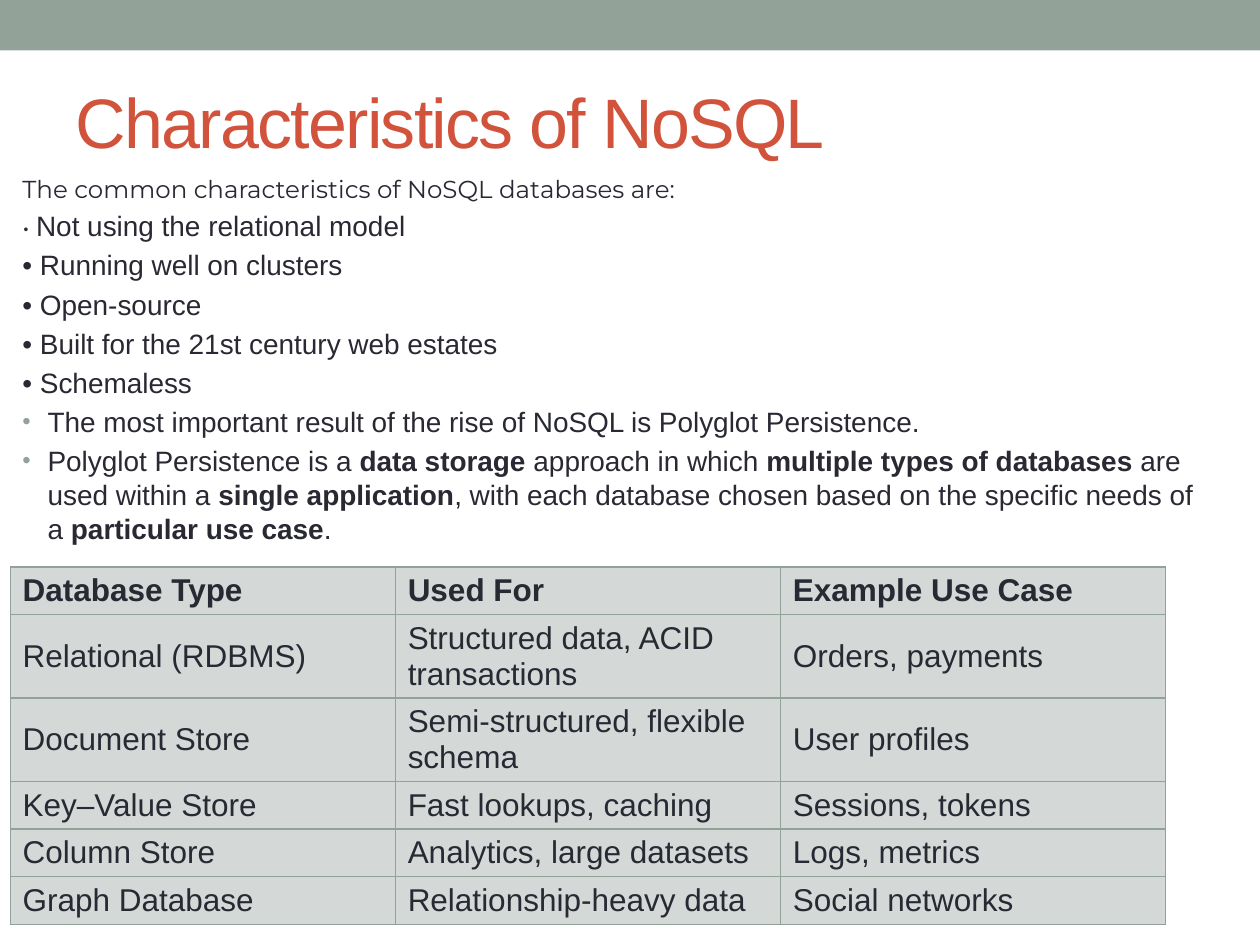
from pptx import Presentation
from pptx import util as u
from pptx.dml.color import RGBColor
from pptx.enum import shapes, text
from pptx.oxml import parse_xml
from pptx.oxml.ns import nsdecls

COLORS = {"bar": "93A299", "title": "D2533C", "ink": "292934", "cell": "D4D9D7"}

INTRO = "The common characteristics of NoSQL databases are:"
TRAITS = [
    "Not using the relational model",
    "Running well on clusters",
    "Open-source",
    "Built for the 21st century web estates",
    "Schemaless",
]
POINTS = [
    [("The most important result of the rise of NoSQL is Polyglot Persistence.", False)],
    [
        ("Polyglot Persistence is a ", False),
        ("data storage ", True),
        ("approach in which ", False),
        ("multiple types of databases ", True),
        ("are used within a ", False),
        ("single application", True),
        (", with each database chosen based on the specific needs of a ", False),
        ("particular use case", True),
        (".", False),
    ],
]
ROWS = [
    ["Database Type", "Used For", "Example Use Case"],
    ["Relational (RDBMS)", "Structured data, ACID transactions", "Orders, payments"],
    ["Document Store", "Semi-structured, flexible schema", "User profiles"],
    ["Key–Value Store", "Fast lookups, caching", "Sessions, tokens"],
    ["Column Store", "Analytics, large datasets", "Logs, metrics"],
    ["Graph Database", "Relationship-heavy data", "Social networks"],
]
HEIGHTS = [0.38, 0.66, 0.66, 0.38, 0.38, 0.38]


def color(name):
    return RGBColor.from_string(COLORS[name])


def box(*sides):
    return [u.Inches(side) for side in sides]


def add_run(para, words, size, bold=False, face="Arial", ink="ink"):
    run = para.add_run()
    run.text = words
    run.font.size = u.Pt(size)
    run.font.bold = bold
    run.font.name = face
    run.font.color.rgb = color(ink)
    return run


def add_bar(slide):
    bar = slide.shapes.add_shape(shapes.MSO_SHAPE.RECTANGLE, *box(0, 0, 10, 0.4))
    bar.shadow.inherit = False
    bar.fill.solid()
    bar.fill.fore_color.rgb = color("bar")
    bar.line.fill.background()


def set_title(slide, words):
    title = slide.shapes.title
    title.left, title.top, title.width, title.height = box(0.5, 0.42, 9, 1.08)
    frame = title.text_frame
    frame.vertical_anchor = text.MSO_ANCHOR.MIDDLE
    para = frame.paragraphs[0]
    para.alignment = text.PP_ALIGN.LEFT
    run = add_run(para, words, 40, ink="title")
    run.font._element.set("spc", "-100")


def add_line(frame):
    para = frame.add_paragraph()
    para.space_before = u.Pt(3.2)
    return para


def set_bullet(para):
    props = para._p.get_or_add_pPr()
    props.set("marL", str(u.Inches(0.2)))
    props.set("indent", str(u.Inches(-0.2)))
    for part in (
        f'<a:buClr {nsdecls("a")}><a:srgbClr val="{COLORS["bar"]}"/></a:buClr>',
        f'<a:buSzPct {nsdecls("a")} val="85000"/>',
        f'<a:buFont {nsdecls("a")} typeface="Arial"/>',
        f'<a:buChar {nsdecls("a")} char="•"/>',
    ):
        props.append(parse_xml(part))


def add_body(slide):
    frame = slide.shapes.add_textbox(*box(0.08, 1.33, 9.67, 5.75)).text_frame
    frame.word_wrap = True
    add_run(frame.paragraphs[0], INTRO, 14, face="Montserrat")
    for pos, trait in enumerate(TRAITS):
        para = add_line(frame)
        if pos == 0:
            add_run(para, "• ", 14, face="Montserrat")
            add_run(para, trait, 16)
        else:
            add_run(para, "• " + trait, 16)
    for point in POINTS:
        para = add_line(frame)
        set_bullet(para)
        for words, bold in point:
            add_run(para, words, 16, bold)


def set_border(cell):
    props = cell._tc.get_or_add_tcPr()
    for pos, side in enumerate(("lnL", "lnR", "lnT", "lnB")):
        props.insert(pos, parse_xml(
            f'<a:{side} {nsdecls("a")} w="{u.Pt(0.75)}"><a:solidFill>'
            f'<a:srgbClr val="{COLORS["bar"]}"/></a:solidFill></a:{side}>'))


def add_grid(slide):
    place = box(0.08, 4.5, 9.17, sum(HEIGHTS))
    grid = slide.shapes.add_table(len(ROWS), len(ROWS[0]), *place).table
    for row, high in zip(grid.rows, HEIGHTS):
        row.height = u.Inches(high)
    for r, row in enumerate(ROWS):
        for c, words in enumerate(row):
            cell = grid.cell(r, c)
            cell.fill.solid()
            cell.fill.fore_color.rgb = color("cell")
            cell.vertical_anchor = text.MSO_ANCHOR.MIDDLE
            cell.margin_top = cell.margin_bottom = u.Inches(0.02)
            set_border(cell)
            add_run(cell.text_frame.paragraphs[0], words, 18, r == 0)


def main():
    deck = Presentation()
    deck.slide_width, deck.slide_height = box(10, 7.5)
    slide = deck.slides.add_slide(deck.slide_layouts[5])
    add_bar(slide)
    set_title(slide, "Characteristics of NoSQL")
    add_body(slide)
    add_grid(slide)
    deck.save("out.pptx")


if __name__ == "__main__":
    main()
